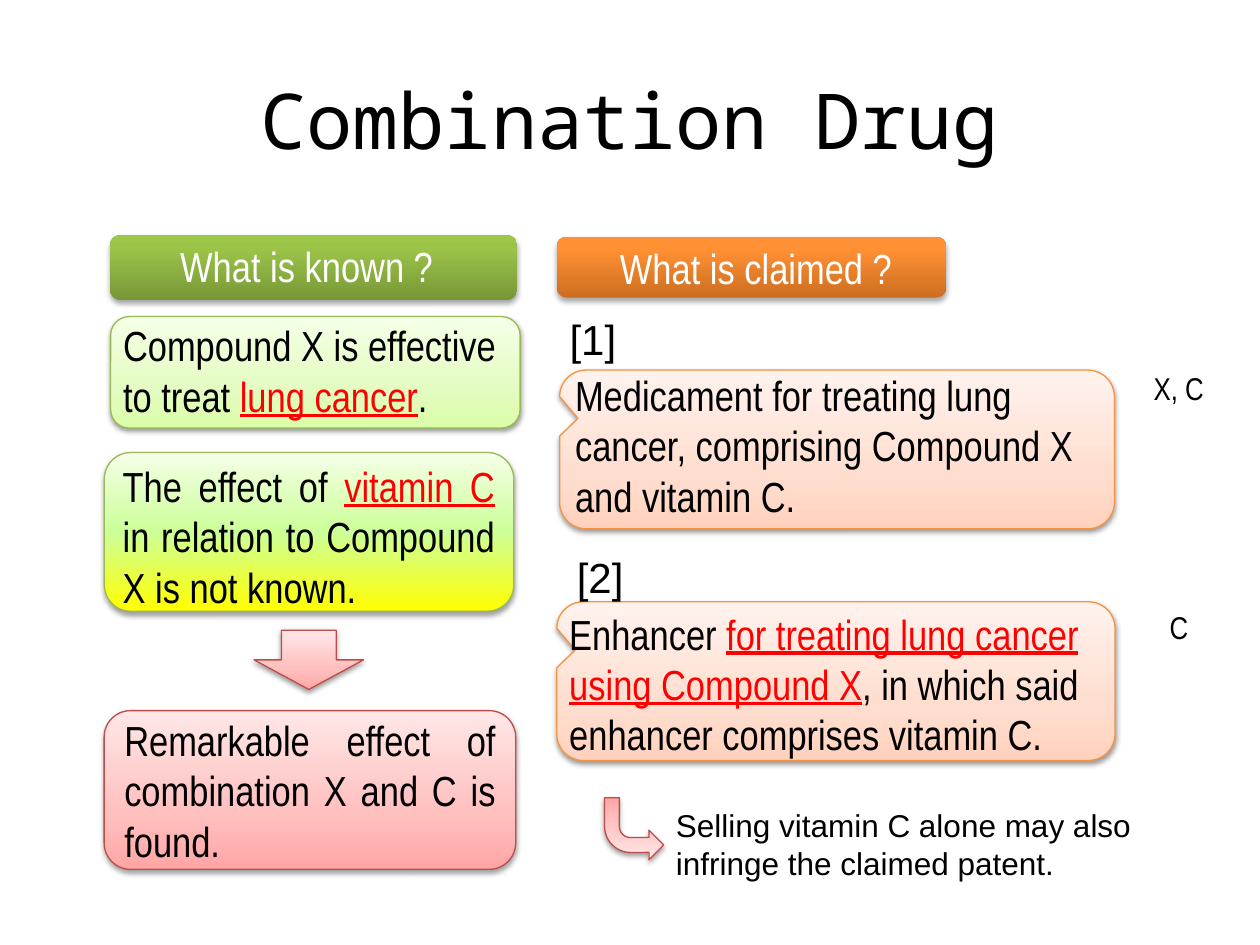
"""Builds the Combination Drug slide: known facts on the left, claims on the right."""
import pptx
import pptx.util
import pptx.dml.color
import pptx.enum.shapes
import pptx.enum.text
import pptx.oxml
import pptx.oxml.ns

Pt = pptx.util.Pt
SHAPE = pptx.enum.shapes.MSO_SHAPE
ALIGN = pptx.enum.text.PP_ALIGN
ANCHOR = pptx.enum.text.MSO_ANCHOR
AUTO_SIZE = pptx.enum.text.MSO_AUTO_SIZE

COLORS = {
    "black": "000000", "white": "FFFFFF", "red": "FF0000",
    "green line": "98B955", "orange line": "F69240", "red line": "BF4C48",
}
GRADIENTS = {
    "green header": [(0, "779737"), (80, "9BC348"), (100, "9DC746")],
    "orange header": [(0, "CC6E20"), (80, "FF9034"), (100, "FF9136")],
    "green": [(0, "DAFDA7"), (35, "E4FCC2"), (100, "F5FFE7")],
    "yellow": [(0, "FFFF00"), (50, "CCFF99"), (100, "F5FFE7")],
    "orange": [(0, "FFD2BD"), (35, "FFDED0"), (100, "FFF2ED")],
    "red": [(0, "FFA6A5"), (35, "FFC0BF"), (100, "FFE7E7")],
}
NARROW = "Arial Narrow"
SANS = "Arial"
MONO = "Noto Sans Mono"

HEADERS = [
    ((62.9, 134.4, 232.6, 37.2), "green header", "What is known ?", (38.3, 0, 0, 2.6)),
    ((318.2, 135.4, 222.5, 34.6), "orange header", "What is claimed ?", (34.4, 0, 0, 0)),
]
PANELS = [
    (SHAPE.ROUNDED_RECTANGLE, (63.2, 180.9, 234, 63.7), "green", "green line"),
    (SHAPE.ROUNDED_RECTANGLE, (59.6, 258.6, 234, 90.7), "yellow", "green line"),
    (SHAPE.DOWN_ARROW, (145.2, 360.2, 62.6, 33.8), "red", "red line"),
    (SHAPE.ROUNDED_RECTANGULAR_CALLOUT, (319.8, 211.5, 317, 90.7), "orange", "orange line"),
    (SHAPE.ROUNDED_RECTANGULAR_CALLOUT, (318.2, 343.9, 319, 90.7), "orange", "orange line"),
    (SHAPE.BENT_ARROW, (345.5, 455.8, 33.8, 35.5), "red", "red line"),
]
FOUND_BOX = (59.5, 406.1, 235.2, 90.7)
FOUND_EFFECT = [("Remarkable effect of combination X and C is found.", "black")]

PARAGRAPHS = [
    ((63.2, 179.3, 234, 65.5), NARROW, 24, ALIGN.LEFT,
     [("Compound X is effective to treat ", "black"), ("lung cancer", "red"), (".", "black")]),
    ((63, 259.6, 226.8, 94.3), NARROW, 24, ALIGN.JUSTIFY,
     [("The effect of ", "black"), ("vitamin C ", "red"),
      ("in relation to Compound X is not known.", "black")]),
    ((321.5, 207.6, 315.4, 94.3), NARROW, 24, ALIGN.LEFT,
     [("Medicament for treating lung cancer, comprising Compound X and vitamin C.", "black")]),
    ((318.2, 343.9, 324.7, 94.3), NARROW, 24, ALIGN.LEFT,
     [("Enhancer ", "black"), ("for treating lung cancer using Compound X", "red"),
      (", in which said enhancer comprises vitamin C.", "black")]),
    ((379.1, 457.2, 280.1, 51.1), SANS, 18, ALIGN.LEFT,
     [("Selling vitamin C alone may also infringe the claimed patent.", "black")]),
]
LABELS = [
    ((318.4, 175.7, 41.8, 36), SANS, 24, "[1]"),
    ((322.5, 311.8, 41.8, 36), SANS, 24, "[2]"),
    ((652.1, 207.4, 43.9, 28.8), NARROW, 18, "X, C"),
    ((661.2, 343.9, 25.2, 28.8), NARROW, 18, "C"),
]


def rgb(name):
    return pptx.dml.color.RGBColor.from_string(COLORS[name])


def write_runs(text_frame, runs, font_name, size, alignment):
    paragraph = text_frame.paragraphs[0]
    paragraph.alignment = alignment
    for text, color in runs:
        run = paragraph.add_run()
        run.text = text
        run.font.name = font_name
        run.font.size = Pt(size)
        run.font.color.rgb = rgb(color)
        if color == "red":
            run.font.underline = True


def add_text(slide, box, font_name, size, alignment, runs, wrap=True):
    text_box = slide.shapes.add_textbox(*map(Pt, box))
    text_box.text_frame.word_wrap = wrap
    text_box.text_frame.auto_size = AUTO_SIZE.SHAPE_TO_FIT_TEXT
    write_runs(text_box.text_frame, runs, font_name, size, alignment)
    return text_box


def write_inside(shape, runs, alignment):
    shape.text_frame.word_wrap = True
    shape.text_frame.vertical_anchor = ANCHOR.MIDDLE
    write_runs(shape.text_frame, runs, NARROW, 24, alignment)


def fill_gradient(shape, stops):
    shape.fill.gradient()
    shape.fill.gradient_angle = 90
    stop_list = shape._element.spPr.find(".//" + pptx.oxml.ns.qn("a:gsLst"))
    for old_stop in list(stop_list):
        stop_list.remove(old_stop)
    for position, color in stops:
        stop_list.append(pptx.oxml.parse_xml(
            f'<a:gs {pptx.oxml.ns.nsdecls("a")} pos="{position * 1000}">'
            f'<a:srgbClr val="{color}"/></a:gs>'))


def add_shadow(shape, distance, opacity):
    shape.shadow.inherit = False
    effects = shape._element.spPr.find(pptx.oxml.ns.qn("a:effectLst"))
    effects.append(pptx.oxml.parse_xml(
        f'<a:outerShdw {pptx.oxml.ns.nsdecls("a")} blurRad="{Pt(3.1)}" '
        f'dist="{Pt(distance)}" dir="5400000" rotWithShape="0">'
        f'<a:srgbClr val="{COLORS["black"]}"><a:alpha val="{opacity * 1000}"/>'
        '</a:srgbClr></a:outerShdw>'))


def add_panel(slide, kind, box, gradient, line=None):
    shape = slide.shapes.add_shape(kind, *map(Pt, box))
    fill_gradient(shape, GRADIENTS[gradient])
    if line:
        shape.line.color.rgb = rgb(line)
        shape.line.width = Pt(0.75)
        add_shadow(shape, 1.6, 38)
    else:
        shape.line.fill.background()
        add_shadow(shape, 1.8, 35)
    if kind == SHAPE.ROUNDED_RECTANGULAR_CALLOUT:
        for index, value in enumerate((-0.467, -0.196, 0.167)):
            shape.adjustments[index] = value
    if kind == SHAPE.BENT_ARROW:
        shape.rotation = 180
        shape._element.spPr.xfrm.set("flipH", "1")
    return shape


def add_header(slide, box, gradient, text, margins):
    header = add_panel(slide, SHAPE.ROUNDED_RECTANGLE, box, gradient)
    frame = header.text_frame
    (frame.margin_left, frame.margin_top,
     frame.margin_right, frame.margin_bottom) = map(Pt, margins)
    write_inside(header, [(text, "white")], ALIGN.LEFT)


def main():
    presentation = pptx.Presentation()
    presentation.slide_width, presentation.slide_height = Pt(720), Pt(540)
    slide = presentation.slides.add_slide(presentation.slide_layouts[6])

    title = add_text(slide, (36, 36.4, 648, 62.6), MONO, 44, ALIGN.CENTER,
                     [("Combination Drug", "black")])
    title.text_frame.auto_size = AUTO_SIZE.NONE
    title.text_frame.vertical_anchor = ANCHOR.MIDDLE

    for header in HEADERS:
        add_header(slide, *header)
    for panel in PANELS:
        add_panel(slide, *panel)
    found = add_panel(slide, SHAPE.ROUNDED_RECTANGLE, FOUND_BOX, "red", "red line")
    write_inside(found, FOUND_EFFECT, ALIGN.JUSTIFY)

    for paragraph in PARAGRAPHS:
        add_text(slide, *paragraph)
    for box, font_name, size, text in LABELS:
        add_text(slide, box, font_name, size, ALIGN.LEFT, [(text, "black")], wrap=False)

    presentation.save("out.pptx")


if __name__ == "__main__":
    main()
